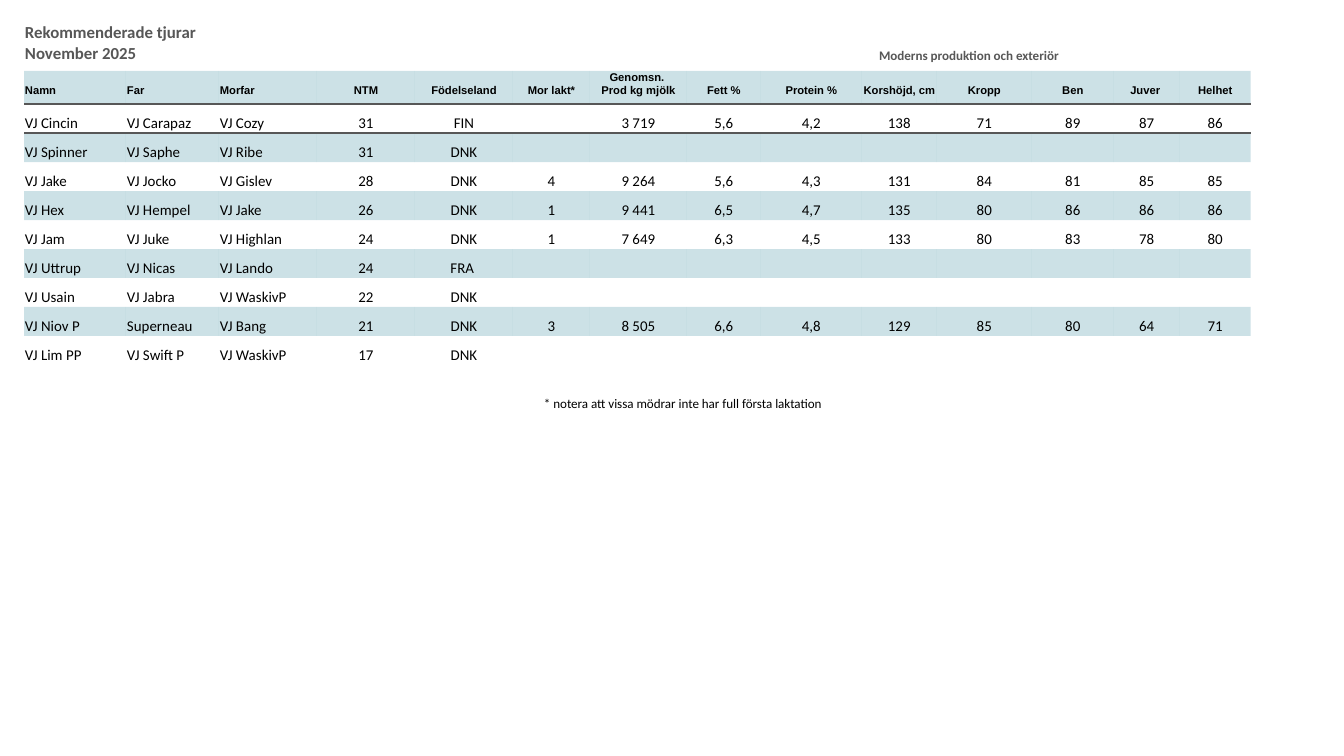
from typing import NamedTuple

from lxml.etree import SubElement
from pptx import Presentation
from pptx.dml.color import RGBColor
from pptx.enum.text import MSO_ANCHOR as Anchor, PP_ALIGN as Align
from pptx.oxml import parse_xml
from pptx.oxml.ns import nsdecls, qn
from pptx.util import Pt

SCALE = 914400 / 134.4
ROW = 29
GREY = RGBColor(0x57, 0x57, 0x57)
BLACK = RGBColor(0, 0, 0)
TEAL = RGBColor(0x00, 0x6B, 0x85)
PLAIN = "{2D5ABB26-0587-4C30-8999-92F81FD0307C}"


class Col(NamedTuple):
    label: str
    width: int
    align: Align = Align.CENTER


class Bull(NamedTuple):
    name: str
    sire: str
    grand: str
    index: str
    land: str
    dam: tuple = ("",) * 9


COLS = [
    Col("Namn", 102, Align.LEFT),
    Col("Far", 93, Align.LEFT),
    Col("Morfar", 98, Align.LEFT),
    Col("NTM", 98),
    Col("Födelseland", 98),
    Col("Mor lakt*", 77),
    Col("Genomsn. \nProd kg mjölk", 97),
    Col("Fett %", 74),
    Col("Protein %", 101),
    Col("Korshöjd, cm", 75),
    Col("Kropp", 95),
    Col("Ben", 82),
    Col("Juver ", 66),
    Col("Helhet", 71),
]

BULLS = [
    Bull("VJ Cincin", "VJ Carapaz", "VJ Cozy", "31", "FIN",
         ("", "3 719", "5,6", "4,2", "138", "71", "89", "87", "86")),
    Bull("VJ Spinner", "VJ Saphe", "VJ Ribe", "31", "DNK"),
    Bull("VJ Jake", "VJ Jocko", "VJ Gislev", "28", "DNK",
         ("4", "9 264", "5,6", "4,3", "131", "84", "81", "85", "85")),
    Bull("VJ Hex", "VJ Hempel", "VJ Jake", "26", "DNK",
         ("1", "9 441", "6,5", "4,7", "135", "80", "86", "86", "86")),
    Bull("VJ Jam", "VJ Juke", "VJ Highlan", "24", "DNK",
         ("1", "7 649", "6,3", "4,5", "133", "80", "83", "78", "80")),
    Bull("VJ Uttrup", "VJ Nicas", "VJ Lando", "24", "FRA "),
    Bull("VJ Usain", "VJ Jabra", "VJ WaskivP", "22", "DNK"),
    Bull("VJ Niov P", "Superneau", "VJ Bang", "21", "DNK",
         ("3", "8 505", "6,6", "4,8", "129", "85", "80", "64", "71")),
    Bull("VJ Lim PP", "VJ Swift P", "VJ WaskivP", "17", "DNK"),
]


def px(n: int) -> int:
    return round(n * SCALE)


def add_grid(slide, left: int, top: int, widths: list[int], count: int):
    frame = slide.shapes.add_table(
        count, len(widths), px(left), px(top), px(sum(widths)), px(ROW * count))
    grid = frame.table
    grid.first_row = grid.horz_banding = False
    grid._tbl.tblPr.find(qn("a:tableStyleId")).text = PLAIN
    for col, width in zip(grid.columns, widths):
        col.width = px(width)
    for row in grid.rows:
        row.height = px(ROW)
    return grid


def write(cell, text: str, *, size: int = 8, font: str = "Calibri",
          color: RGBColor = BLACK, bold: bool = False,
          align: Align = Align.LEFT, foot: int = 0, tint: bool = False) -> None:
    cell.vertical_anchor = Anchor.BOTTOM
    cell.margin_left = cell.margin_right = cell.margin_top = px(1)
    cell.margin_bottom = px(foot)
    para = cell.text_frame.paragraphs[0]
    para.text = text
    para.alignment = align
    for run in para.runs:
        run.font.size = Pt(size)
        run.font.name = font
        run.font.bold = bold
        run.font.color.rgb = color
    for gap in para._p.findall(qn("a:br")):
        SubElement(gap, qn("a:rPr"), sz=str(size * 100))
    SubElement(para._p, qn("a:endParaRPr"), sz=str(size * 100))
    if tint:
        cell.fill.solid()
        cell.fill.fore_color.rgb = TEAL
        shade = cell._tc.tcPr.find(".//" + qn("a:srgbClr"))
        SubElement(shade, qn("a:alpha"), val="20000")
    else:
        cell.fill.background()


def rule(cell, side: str) -> None:
    line = parse_xml(
        f'<a:ln{side} {nsdecls("a")} w="{Pt(1)}"><a:solidFill>'
        f'<a:srgbClr val="{GREY}"/></a:solidFill></a:ln{side}>')
    cell._tc.get_or_add_tcPr().insert(0, line)


def add_bulls(slide) -> None:
    grid = add_grid(slide, 24, 22, [col.width for col in COLS], len(BULLS) + 2)
    heads = {0: "Rekommenderade tjurar November 2025",
             7: "Moderns produktion och exteriör"}
    for x, col in enumerate(COLS):
        write(grid.cell(0, x), heads.get(x, ""), size=7 if x else 9, color=GREY,
              bold=True, align=Align.CENTER if x else Align.LEFT, foot=7)
        write(grid.cell(1, x), col.label, size=6, font="Arial", bold=True,
              align=col.align, foot=7, tint=True)
        rule(grid.cell(1, x), "B")
        rule(grid.cell(2, x), "T")
    for first, last in ((0, 1), (5, 6), (7, 13)):
        grid.cell(0, first).merge(grid.cell(0, last))
    for y, bull in enumerate(BULLS):
        for x, text in enumerate((*bull[:5], *bull.dam)):
            write(grid.cell(y + 2, x), text, align=COLS[x].align, tint=y % 2 == 1)


def main() -> None:
    deck = Presentation()
    deck.slide_width, deck.slide_height = px(1344), px(756)
    slide = deck.slides.add_slide(deck.slide_layouts[6])
    add_bulls(slide)
    note = add_grid(slide, 543, 390, [481], 1)
    write(note.cell(0, 0), "* notera att vissa mödrar inte har full första laktation",
          size=7, foot=7)
    deck.save("out.pptx")


if __name__ == "__main__":
    main()
